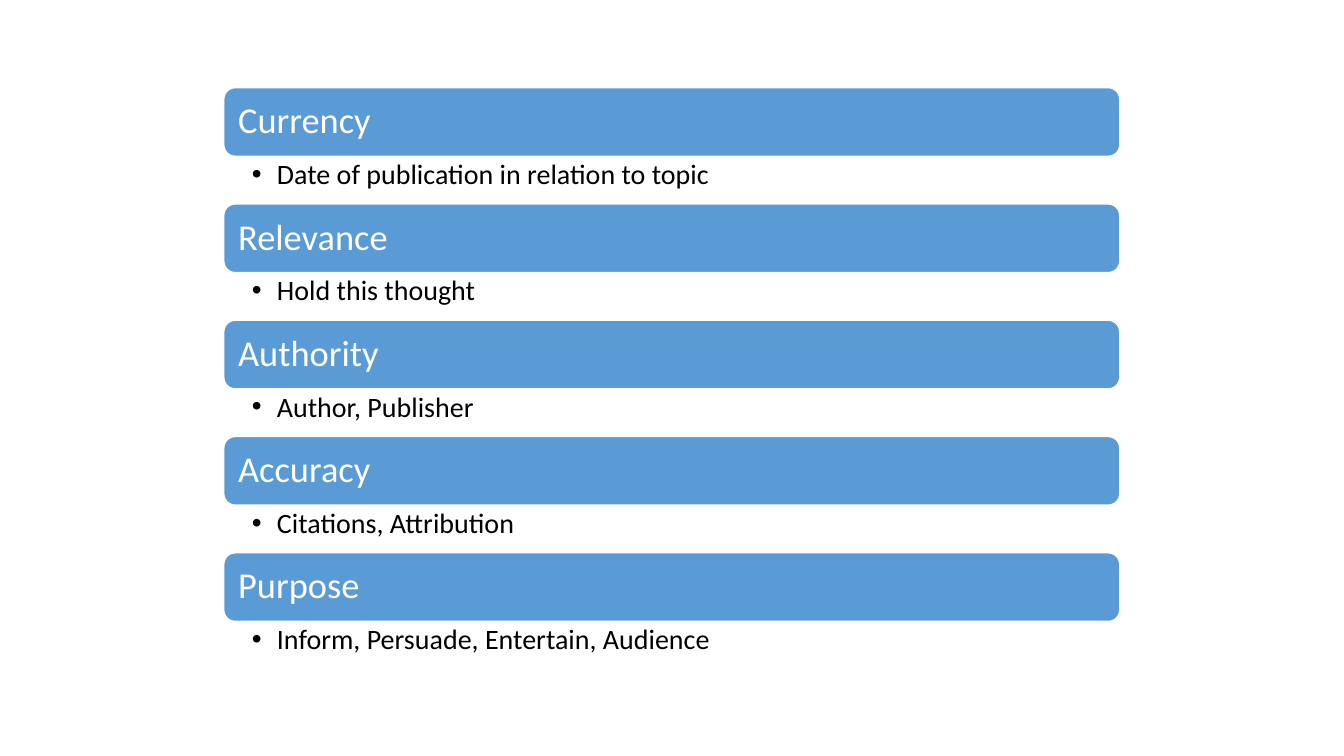
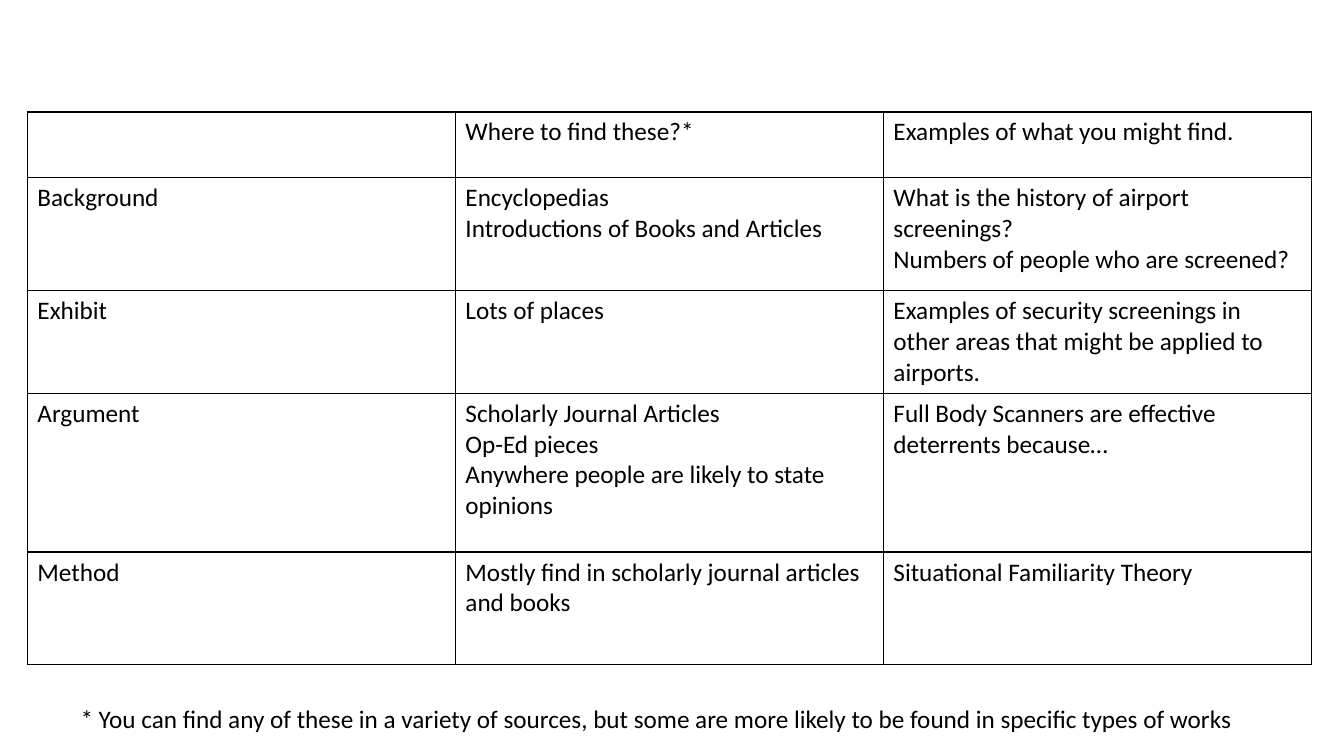
"""Build two slides on judging and using sources."""
import pptx
import pptx.dml.color
import pptx.enum.shapes
import pptx.enum.text
import pptx.oxml
import pptx.oxml.ns
import pptx.util

Cm = pptx.util.Cm
Pt = pptx.util.Pt
Rgb = pptx.dml.color.RGBColor.from_string


class Theme:
    font = "Calibri"
    blue = "5B9BD5"
    white = "FFFFFF"
    black = "000000"
    head = 26
    item = 20
    body = 18
    tight = 0.9
    rule = 1


class Deck:
    def __init__(self, theme):
        self.theme = theme
        self.show = pptx.Presentation()
        self.show.slide_width = Cm(33.87)
        self.show.slide_height = Cm(19.05)
        self.slide = None

    def page(self):
        self.slide = self.show.slides.add_slide(self.show.slide_layouts[6])

    def label(self, frame, text, size, color, space=1.0, bullet=False):
        frame.text = text
        for para in frame.paragraphs:
            para.alignment = pptx.enum.text.PP_ALIGN.LEFT
            para.line_spacing = space
            if bullet:
                self.mark(para)
            para.font.name = self.theme.font
            para.font.size = Pt(size)
            para.font.color.rgb = Rgb(color)

    def mark(self, para):
        props = para._p.get_or_add_pPr()
        props.set("marL", str(Cm(0.63)))
        props.set("indent", str(-Cm(0.63)))
        space = pptx.oxml.ns.nsdecls("a")
        for tag in ('buFont {} typeface="Arial"', 'buChar {} char="•"'):
            props.append(pptx.oxml.parse_xml(f"<a:{tag.format(space)}/>"))

    def inset(self, frame, left, top, right, low):
        frame.margin_left, frame.margin_top = Cm(left), Cm(top)
        frame.margin_right, frame.margin_bottom = Cm(right), Cm(low)

    def bar(self, left, top, width, height, text):
        kind = pptx.enum.shapes.MSO_SHAPE.ROUNDED_RECTANGLE
        shape = self.slide.shapes.add_shape(
            kind, Cm(left), Cm(top), Cm(width), Cm(height))
        shape.shadow.inherit = False
        shape.fill.solid()
        shape.fill.fore_color.rgb = Rgb(self.theme.blue)
        shape.line.color.rgb = Rgb(self.theme.white)
        shape.line.width = Pt(self.theme.rule)
        frame = shape.text_frame
        frame.vertical_anchor = pptx.enum.text.MSO_ANCHOR.MIDDLE
        self.inset(frame, 0.28, 0.28, 0.28, 0.28)
        self.label(frame, text, self.theme.head, self.theme.white,
                   self.theme.tight)

    def box(self, left, top, width, height):
        shape = self.slide.shapes.add_textbox(
            Cm(left), Cm(top), Cm(width), Cm(height))
        return shape.text_frame

    def point(self, left, top, width, height, text):
        frame = self.box(left, top, width, height)
        frame.word_wrap = True
        self.inset(frame, 0.71, 0.1, 0.51, 0.1)
        self.label(frame, text, self.theme.item, self.theme.black,
                   self.theme.tight, True)

    def note(self, left, top, width, height, text):
        frame = self.box(left, top, width, height)
        frame.word_wrap = False
        frame.auto_size = pptx.enum.text.MSO_AUTO_SIZE.SHAPE_TO_FIT_TEXT
        self.label(frame, text, self.theme.body, self.theme.black)

    def edge(self, cell):
        props = cell._tc.get_or_add_tcPr()
        space = pptx.oxml.ns.nsdecls("a")
        for spot, side in enumerate("LRTB"):
            props.insert(spot, pptx.oxml.parse_xml(
                f'<a:ln{side} {space} w="{Pt(self.theme.rule)}"><a:solidFill>'
                f'<a:srgbClr val="{self.theme.black}"/></a:solidFill>'
                f'</a:ln{side}>'))

    def table(self, left, top, width, highs, rows):
        count = len(rows[0])
        grid = self.slide.shapes.add_table(
            len(rows), count, Cm(left), Cm(top), Cm(width),
            Cm(sum(highs))).table
        grid.first_row = False
        grid.horz_banding = False
        for col in grid.columns:
            col.width = Cm(width / count)
        for row, high, texts in zip(grid.rows, highs, rows):
            row.height = Cm(high)
            for cell, text in zip(row.cells, texts):
                cell.fill.background()
                self.edge(cell)
                self.label(cell.text_frame, text, self.theme.body,
                           self.theme.black)


TESTS = [
    ("Currency", "Date of publication in relation to topic"),
    ("Relevance", "Hold this thought"),
    ("Authority", "Author, Publisher"),
    ("Accuracy", "Citations, Attribution"),
    ("Purpose", "Inform, Persuade, Entertain, Audience"),
]

USES = [
    ("", "Where to find these?*", "Examples of what you might find."),
    ("Background", "Encyclopedias\nIntroductions of Books and Articles",
     "What is the history of airport screenings?\n"
     "Numbers of people who are screened?"),
    ("Exhibit", "Lots of places",
     "Examples of security screenings in other areas that might be "
     "applied to airports."),
    ("Argument",
     "Scholarly Journal Articles\vOp-Ed pieces\v"
     "Anywhere people are likely to state opinions",
     "Full Body Scanners are effective deterrents because…"),
    ("Method", "Mostly find in scholarly journal articles and books",
     "Situational Familiarity Theory"),
]


def main():
    deck = Deck(Theme())

    deck.page()
    left, width, high, step = 5.64, 22.58, 1.73, 2.93
    for spot, (name, hint) in enumerate(TESTS):
        top = 2.21 + spot * step
        deck.bar(left, top, width, high, name)
        deck.point(left, top + high, width, step - high, hint)

    deck.page()
    deck.table(0.69, 2.82, 32.36, [1.66, 2.84, 2.59, 4, 2.84], USES)
    deck.note(1.78, 17.6, 29.64, 1.03,
              "* You can find any of these in a variety of sources, but some "
              "are more likely to be found in specific types of works")

    deck.show.save("out.pptx")


if __name__ == "__main__":
    main()
